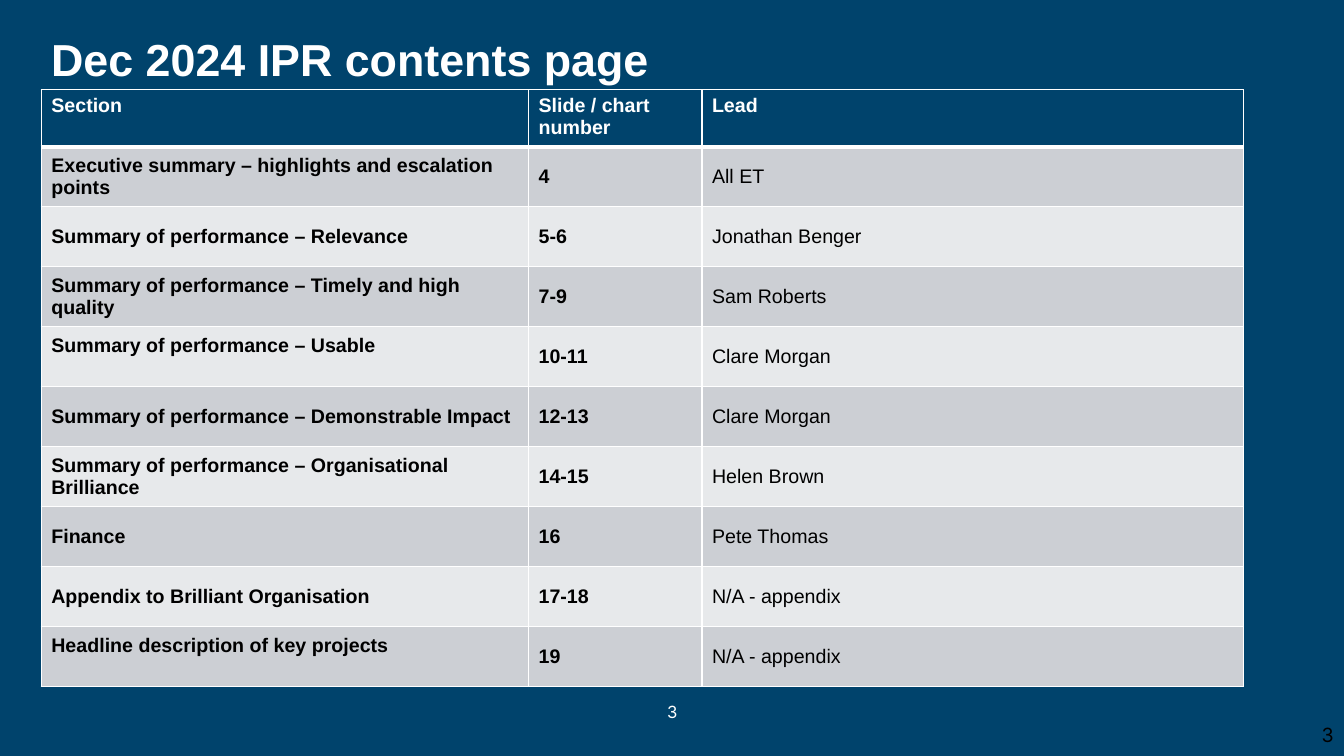
from dataclasses import dataclass

from lxml import etree
from pptx import Presentation
from pptx import util as u
from pptx.dml.color import RGBColor
from pptx.enum import shapes, text
from pptx.oxml import ns

COLOURS = {
    "navy": "00436C",
    "white": "FFFFFF",
    "black": "000000",
    "dark_band": "CCCFD4",
    "light_band": "E7E9EB",
}
ANCHORS = text.MSO_ANCHOR
ALIGNS = text.PP_ALIGN
COLUMN_WIDTHS = (12.28, 4.37, 13.65)
HEADER_HEIGHT = 1.35
ROW_HEIGHT = 1.51
RAISED_MARGIN = 0.2
HEADINGS = ("Section", "Slide / chart number", "Lead")


@dataclass
class Section:
    name: str
    numbers: str
    lead: str
    raised: bool = False


@dataclass
class Label:
    content: str
    left: float
    top: float
    width: float
    height: float
    size: int
    font: str = "Inter"
    colour: str = "white"
    bold: bool = False
    align: ALIGNS = ALIGNS.LEFT
    anchor: ANCHORS = ANCHORS.TOP
    spacing: float = 1.0


SECTIONS = (
    Section("Executive summary – highlights and escalation points", "4", "All ET"),
    Section("Summary of performance – Relevance", "5-6", "Jonathan Benger"),
    Section("Summary of performance – Timely and high quality", "7-9", "Sam Roberts"),
    Section("Summary of performance – Usable", "10-11", "Clare Morgan", raised=True),
    Section("Summary of performance – Demonstrable Impact", "12-13", "Clare Morgan"),
    Section("Summary of performance – Organisational Brilliance", "14-15", "Helen Brown"),
    Section("Finance", "16", "Pete Thomas"),
    Section("Appendix to Brilliant Organisation", "17-18", "N/A - appendix"),
    Section("Headline description of key projects", "19", "N/A - appendix", raised=True),
)

LABELS = (
    Label("3", 13.13, 17.55, 7.62, 1.02, 12, align=ALIGNS.CENTER),
    Label("Dec 2024 IPR contents page", 1.04, 0.76, 27.38, 1.63, 32, font="Arial",
          bold=True, anchor=ANCHORS.MIDDLE, spacing=0.9),
    Label("3", 26.24, 18.01, 7.62, 1.02, 14, colour="black",
          align=ALIGNS.RIGHT, anchor=ANCHORS.MIDDLE),
)


def rgb(colour: str) -> RGBColor:
    return RGBColor.from_string(COLOURS[colour])


def write(para, content: str, size: int, font: str, colour: str, bold: bool) -> None:
    span = para.add_run()
    span.text = content
    for name, value in {"size": u.Pt(size), "name": font, "bold": bold}.items():
        setattr(span.font, name, value)
    span.font.color.rgb = rgb(colour)


def add_background(page, width: int, height: int) -> None:
    panel = page.shapes.add_shape(shapes.MSO_SHAPE.RECTANGLE, 0, 0, width, height)
    panel.shadow.inherit = False
    panel.fill.solid()
    panel.fill.fore_color.rgb = rgb("navy")
    panel.line.fill.background()


def add_label(page, label: Label) -> None:
    bounds = (label.left, label.top, label.width, label.height)
    box = page.shapes.add_textbox(*map(u.Cm, bounds))
    frame = box.text_frame
    for name, value in {"word_wrap": True, "vertical_anchor": label.anchor}.items():
        setattr(frame, name, value)
    para = frame.paragraphs[0]
    for name, value in {"alignment": label.align, "line_spacing": label.spacing}.items():
        setattr(para, name, value)
    write(para, label.content, label.size, label.font, label.colour, label.bold)


def add_borders(cell, widths: dict[str, int]) -> None:
    properties = cell._tc.get_or_add_tcPr()
    for side, width in widths.items():
        line = etree.SubElement(properties, ns.qn(f"a:ln{side}"), w=str(u.Pt(width)))
        fill = etree.SubElement(line, ns.qn("a:solidFill"))
        etree.SubElement(fill, ns.qn("a:srgbClr"), val=COLOURS["white"])


def fill_cell(cell, content: str, row: int, bold: bool, raised: bool) -> None:
    header = row == 0
    add_borders(cell, {"L": 1, "R": 1, "T": 3 if row == 1 else 1, "B": 3 if header else 1})
    band = "navy" if header else ("light_band", "dark_band")[row % 2]
    cell.fill.solid()
    cell.fill.fore_color.rgb = rgb(band)
    cell.vertical_anchor = ANCHORS.TOP if header or raised else ANCHORS.MIDDLE
    if raised:
        cell.margin_top = u.Cm(RAISED_MARGIN)
    write(cell.text_frame.paragraphs[0], content, 14, "Arial",
          "white" if header else "black", bold)


def add_contents(page) -> None:
    heights = [HEADER_HEIGHT] + [ROW_HEIGHT] * len(SECTIONS)
    frame = page.shapes.add_table(
        len(heights), len(COLUMN_WIDTHS), u.Cm(1.04), u.Cm(2.26),
        u.Cm(sum(COLUMN_WIDTHS)), u.Cm(sum(heights)))
    table = frame.table
    for column, width in zip(table.columns, COLUMN_WIDTHS):
        column.width = u.Cm(width)
    for row, height in zip(table.rows, heights):
        row.height = u.Cm(height)
    for index, heading in enumerate(HEADINGS):
        fill_cell(table.cell(0, index), heading, 0, True, False)
    for row, section in enumerate(SECTIONS, start=1):
        fill_cell(table.cell(row, 0), section.name, row, True, section.raised)
        fill_cell(table.cell(row, 1), section.numbers, row, True, False)
        fill_cell(table.cell(row, 2), section.lead, row, False, False)


def main() -> None:
    deck = Presentation()
    deck.slide_width, deck.slide_height = u.Cm(33.87), u.Cm(19.05)
    page = deck.slides.add_slide(deck.slide_layouts[6])
    add_background(page, deck.slide_width, deck.slide_height)
    for label in LABELS:
        add_label(page, label)
    add_contents(page)
    deck.save("out.pptx")


if __name__ == "__main__":
    main()
